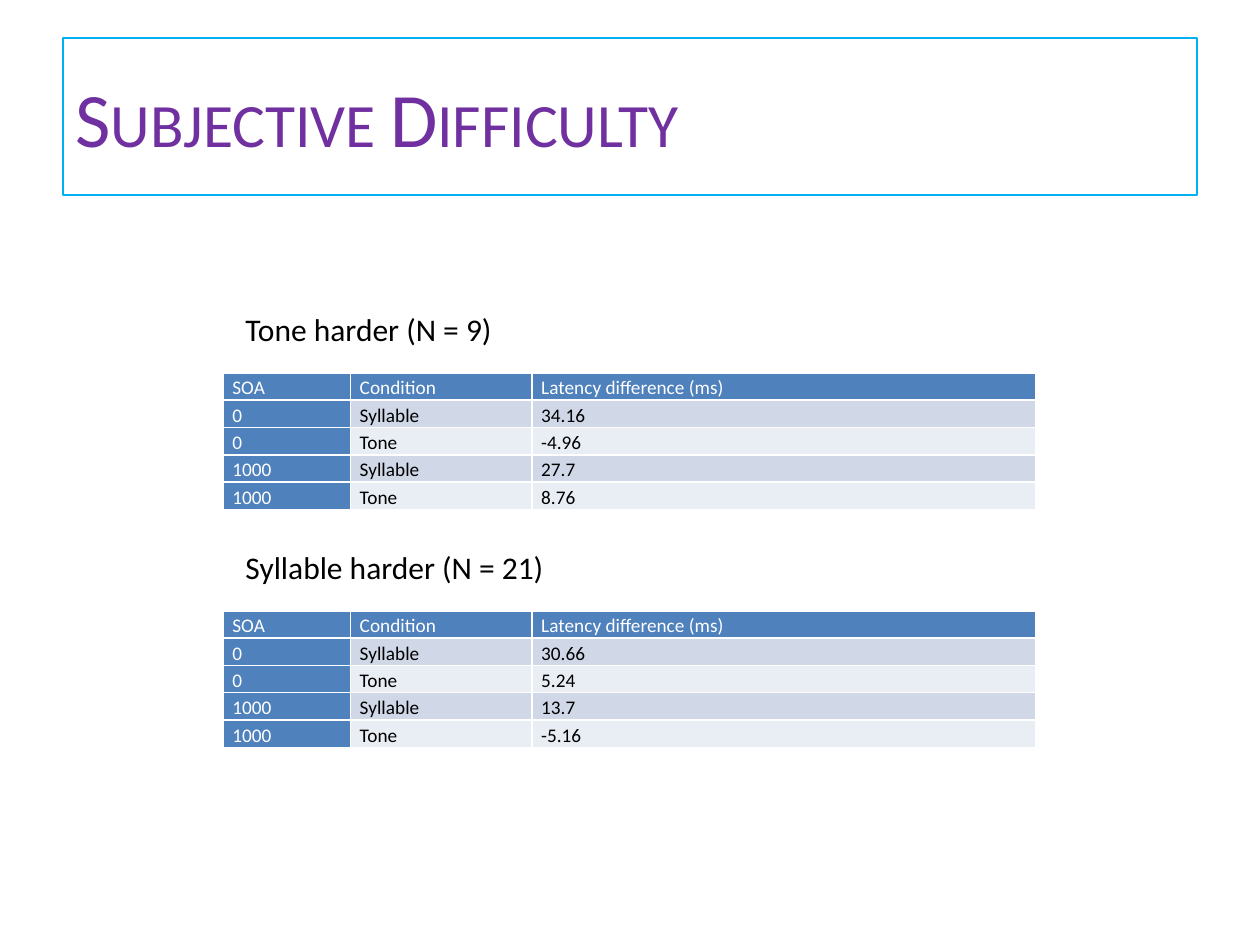
from lxml import etree
from pptx import Presentation
from pptx import util as u
from pptx.dml.color import RGBColor
from pptx.enum import shapes, text
from pptx.oxml.ns import qn

# Content
TITLE = "Subjective Difficulty"
HEADER = ("SOA", "Condition", "Latency difference (ms)")
CONDITIONS = [("0", "Syllable"), ("0", "Tone"), ("1000", "Syllable"), ("1000", "Tone")]
GROUPS = [
    ("Tone harder (N = 9)", ("34.16", "-4.96", "27.7", "8.76")),
    ("Syllable harder (N = 21)", ("30.66", "5.24", "13.7", "-5.16")),
]

THEME = {
    "font": "Calibri", "title_size": 44, "heading_size": 18, "cell_size": 11,
    "title": "7030A0", "frame": "00B0F0", "accent": "4F81BD",
    "bands": ("D0D8E8", "E9EDF4"), "light": "FFFFFF", "dark": "000000",
}

# Layout in points
TITLE_BOX = (36, 21.6, 648, 90)
HEADING_LEFT, HEADING_TOP, HEADING_WIDTH, HEADING_HEIGHT = 133.2, 173.5, 232.56, 28.8
GROUP_STEP, TABLE_OFFSET = 136, 39.6
TABLE_LEFT, COLUMN_WIDTHS, ROW_HEIGHT = 127.6, (72.8, 103.7, 288), 15.6


def points(*lengths):
    return [u.Pt(length) for length in lengths]


def set_values(target, values):
    for name, value in values.items():
        setattr(target, name, value)


def write(frame, words, size, color):
    paragraph = frame.paragraphs[0]
    paragraph.alignment = text.PP_ALIGN.LEFT
    run = paragraph.add_run()
    run.text = words
    set_values(run.font, {"name": THEME["font"], "size": u.Pt(size)})
    run.font.color.rgb = RGBColor.from_string(color)
    return paragraph, run


def add_borders(cell, color, width):
    properties = cell._tc.get_or_add_tcPr()
    for side in ("lnL", "lnR", "lnT", "lnB"):
        line = etree.SubElement(properties, qn(f"a:{side}"), w=str(u.Pt(width)))
        fill = etree.SubElement(line, qn("a:solidFill"))
        etree.SubElement(fill, qn("a:srgbClr"), val=color)


def format_cell(cell, words, fill, color):
    set_values(cell, dict(zip(
        ("margin_left", "margin_top", "margin_right", "margin_bottom"), points(5.2, 0, 5.2, 0))))
    paragraph, _ = write(cell.text_frame, words, THEME["cell_size"], color)
    paragraph.line_spacing = 1.15
    add_borders(cell, THEME["light"], 1)
    cell.fill.solid()
    cell.fill.fore_color.rgb = RGBColor.from_string(fill)


def add_title(slide):
    shape = slide.shapes.add_shape(shapes.MSO_SHAPE.RECTANGLE, *points(*TITLE_BOX))
    shape.shadow.inherit = False
    shape.fill.background()
    shape.line.color.rgb = RGBColor.from_string(THEME["frame"])
    shape.line.width = u.Pt(1)
    set_values(shape.text_frame, {"word_wrap": True, "vertical_anchor": text.MSO_ANCHOR.MIDDLE})
    _, run = write(shape.text_frame, TITLE, THEME["title_size"], THEME["title"])
    run._r.get_or_add_rPr().set("cap", "small")


def add_heading(slide, words, top):
    box = slide.shapes.add_textbox(*points(HEADING_LEFT, top, HEADING_WIDTH, HEADING_HEIGHT))
    set_values(box.text_frame, {"word_wrap": True, "auto_size": text.MSO_AUTO_SIZE.SHAPE_TO_FIT_TEXT})
    write(box.text_frame, words, THEME["heading_size"], THEME["dark"])


def add_latency_table(slide, latencies, top):
    rows = [HEADER] + [(*condition, value) for condition, value in zip(CONDITIONS, latencies)]
    table = slide.shapes.add_table(
        len(rows), len(HEADER),
        *points(TABLE_LEFT, top, sum(COLUMN_WIDTHS), ROW_HEIGHT * len(rows))).table
    set_values(table, {"first_col": True})
    for column, width in zip(table.columns, COLUMN_WIDTHS):
        column.width = u.Pt(width)
    for i, row in enumerate(rows):
        table.rows[i].height = u.Pt(ROW_HEIGHT)
        for j, words in enumerate(row):
            if i == 0 or j == 0:
                fill, color = THEME["accent"], THEME["light"]
            else:
                fill, color = THEME["bands"][(i - 1) % 2], THEME["dark"]
            format_cell(table.cell(i, j), words, fill, color)


def main():
    presentation = Presentation()
    set_values(presentation, {"slide_width": u.Pt(720), "slide_height": u.Pt(540)})
    slide = presentation.slides.add_slide(presentation.slide_layouts[6])
    add_title(slide)
    # One heading and table per group
    for index, (heading, latencies) in enumerate(GROUPS):
        top = HEADING_TOP + index * GROUP_STEP
        add_heading(slide, heading, top)
        add_latency_table(slide, latencies, top + TABLE_OFFSET)
    presentation.save("out.pptx")


if __name__ == "__main__":
    main()
